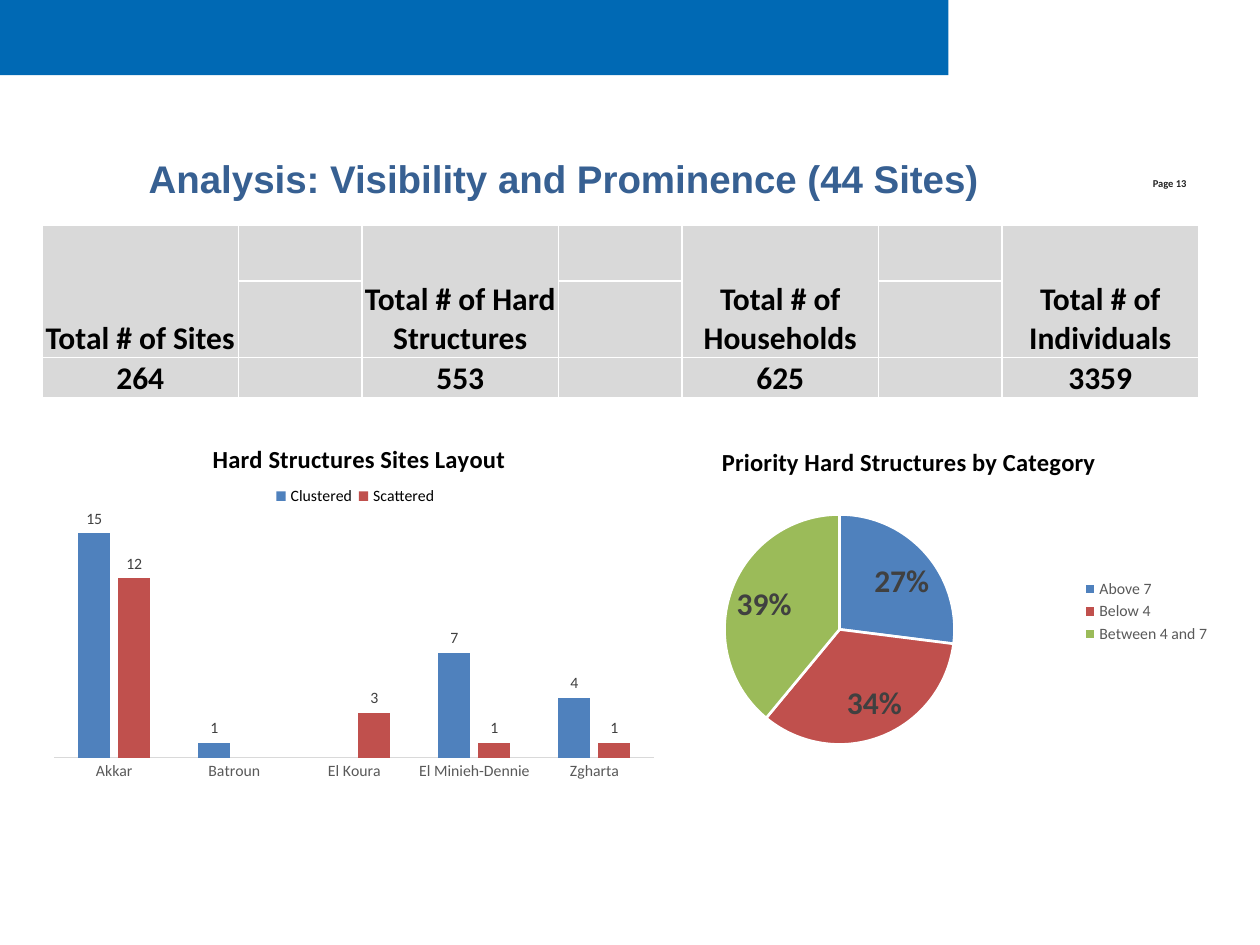
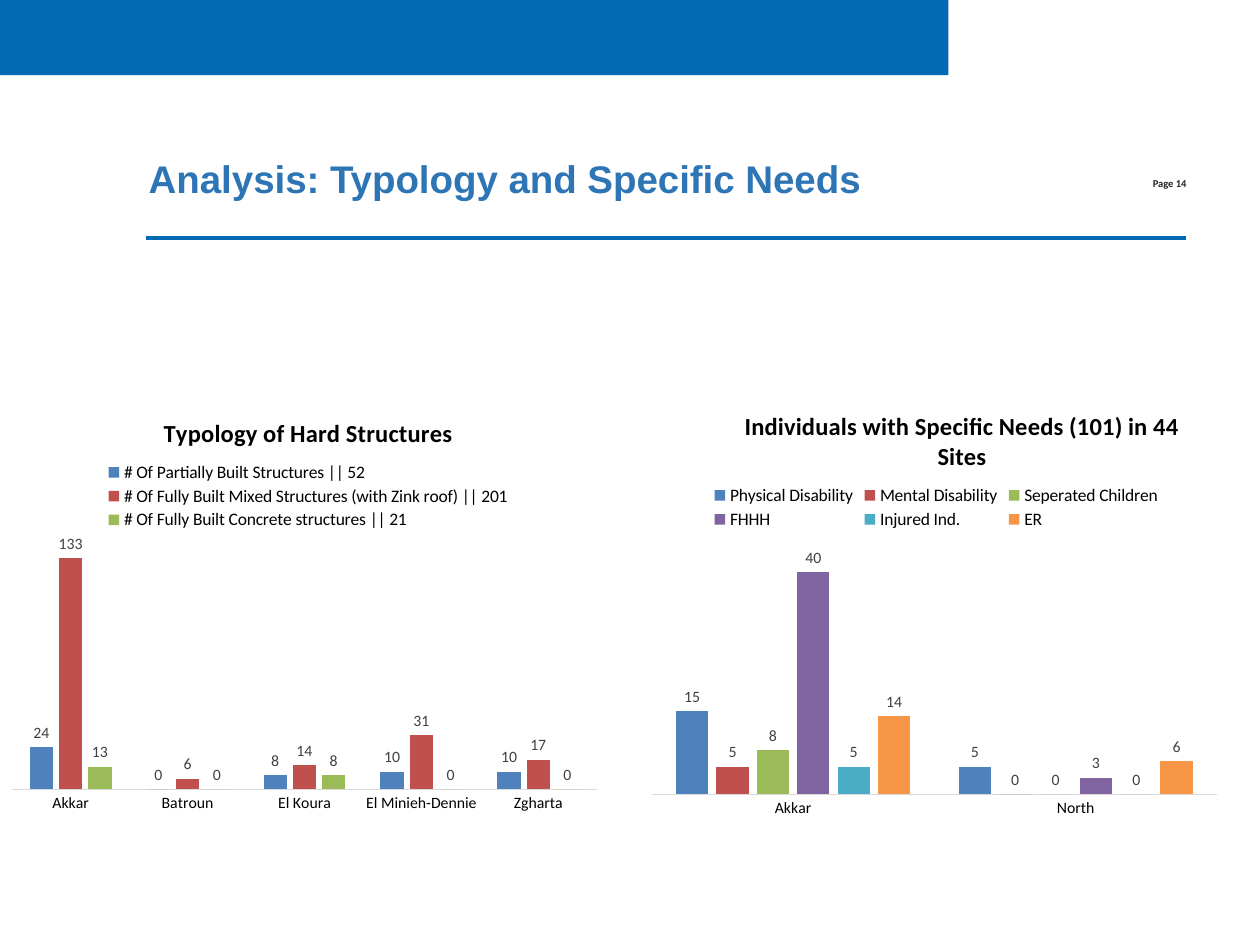
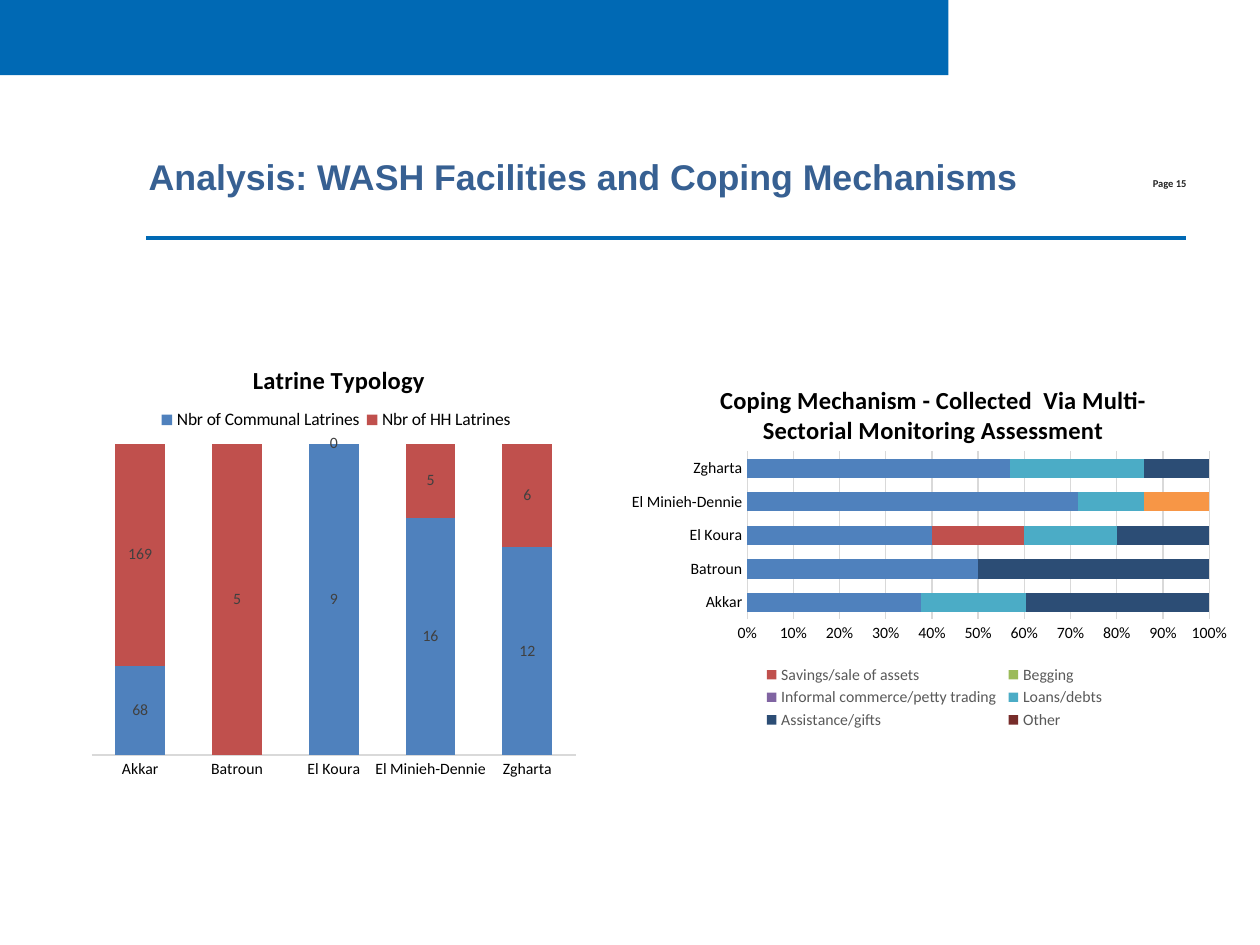
import pptx
import pptx.chart.data
import pptx.dml.color
import pptx.enum.chart
import pptx.enum.shapes
import pptx.enum.text
import pptx.oxml
import pptx.oxml.ns
import pptx.util

Pt = pptx.util.Pt
qn = pptx.oxml.ns.qn
Kind = pptx.enum.chart.XL_CHART_TYPE
Legend = pptx.enum.chart.XL_LEGEND_POSITION
Label = pptx.enum.chart.XL_LABEL_POSITION
Align = pptx.enum.text.PP_ALIGN
RGB = pptx.dml.color.RGBColor.from_string

COLORS = {
    "band": "0069B4", "title": "376092", "bright title": "2E75B6", "page": "232323",
    "text": "000000", "muted": "595959", "label": "404040", "grid": "D9D9D9",
    "panel": "D9D9D9", "white": "FFFFFF",
    "blue": "4F81BD", "red": "C0504D", "green": "9BBB59", "purple": "8064A2",
    "teal": "4BACC6", "orange": "F79646", "navy": "2C4D75", "maroon": "772C2A",
}
SERIES_COLORS = ["blue", "red", "green", "purple", "teal", "orange", "navy", "maroon"]
DISTRICTS = ["Akkar", "Batroun", "El Koura", "El Minieh-Dennie", "Zgharta"]
TOTALS = [("Total # of Sites", "264"), ("Total # of Hard Structures", "553"),
          ("Total # of Households", "625"), ("Total # of Individuals", "3359")]


def write_text(frame, text, size=18, font="Calibri", color="text", align=None):
    paragraph = frame.paragraphs[0]
    paragraph.alignment = align
    run = paragraph.add_run()
    run.text = text
    run.font.name = font
    run.font.size = Pt(size)
    run.font.bold = True
    run.font.color.rgb = RGB(COLORS[color])


def place(element, box, frame, inner=False):
    """Fix a chart part at box, given in slide points, inside the chart's frame."""
    left, top, width, height = frame
    shares = [("x", (box[0] - left) / width), ("y", (box[1] - top) / height)]
    if len(box) == 4:
        shares += [("w", box[2] / width), ("h", box[3] / height)]
    target = '<c:layoutTarget val="inner"/>' if inner else ""
    modes = '<c:xMode val="edge"/><c:yMode val="edge"/>'
    values = "".join(f'<c:{name} val="{share:.4f}"/>' for name, share in shares)
    layout = pptx.oxml.parse_xml(
        f'<c:layout {pptx.oxml.ns.nsdecls("c")}><c:manualLayout>{target}{modes}{values}'
        "</c:manualLayout></c:layout>")
    for old_layout in element.findall(qn("c:layout")):
        element.remove(old_layout)
    overlay = element.find(qn("c:overlay"))
    if overlay is None:
        element.insert(0, layout)
    else:
        overlay.addprevious(layout)


# Content: boxes are left, top, width, height in points on the slide
slides = [
    {"title": "Analysis: Visibility and Prominence (44 Sites)", "size": 22, "color": "title",
     "charts": [
         {"title": "Hard Structures Sites Layout", "kind": Kind.COLUMN_CLUSTERED,
          "frame": (24, 238, 357, 212), "title at": (119, 250),
          "plot": (31, 296, 343, 137), "legend": (154, 277, 98, 13),
          "legend size": 9, "axis color": "muted", "maximum": 16,
          "categories": DISTRICTS,
          "series": [("Clustered", [15, 1, None, 7, 4]),
                     ("Scattered", [12, None, 3, 1, 1])]},
         {"title": "Priority Hard Structures by Category", "kind": Kind.PIE,
          "frame": (336, 239, 362, 221), "title at": (410, 252),
          "plot": (414, 294, 131.5, 131.5), "legend": (617, 329, 76, 41),
          "legend size": 9, "legend color": "muted", "legend side": Legend.RIGHT,
          "categories": ["Above 7", "Below 4", "Between 4 and 7"],
          "series": [("Share", [27, 34, 39])]},
     ]},
    {"title": "Analysis: Typology and Specific Needs", "size": 22, "color": "bright title",
     "charts": [
         {"title": "Typology of Hard Structures", "kind": Kind.COLUMN_CLUSTERED,
          "frame": (0, 222, 348, 247), "title at": (91, 235),
          "plot": (7, 312, 334, 139), "legend": (58, 262, 236, 43),
          "maximum": 140, "categories": DISTRICTS,
          "series": [
              ("# Of Partially Built Structures || 52", [24, 0, 8, 10, 10]),
              ("# Of Fully Built Mixed Structures (with Zink roof) || 201",
               [133, 6, 14, 31, 17]),
              ("# Of Fully Built Concrete structures || 21", [13, 0, 8, 0, 0])]},
         {"title": "Individuals with Specific Needs (101) in 44 Sites",
          "kind": Kind.COLUMN_CLUSTERED,
          "frame": (366, 219, 336, 253), "title at": (423, 231),
          "plot": (372.5, 311, 323, 143), "legend": (405, 275, 260, 30),
          "maximum": 45, "categories": ["Akkar", "North"],
          "series": [("Physical Disability", [15, 5]), ("Mental Disability", [5, 0]),
                     ("Seperated Children", [8, 0]), ("FHHH", [40, 3]),
                     ("Injured Ind.", [5, 0]), ("ER", [14, 6])]},
     ]},
    {"title": "Analysis: WASH Facilities and Coping Mechanisms", "size": 20.4, "color": "title",
     "charts": [
         {"title": "Latrine Typology", "kind": Kind.COLUMN_STACKED_100,
          "frame": (47, 192, 288, 258), "title at": (142, 205),
          "plot": (52.5, 253.5, 276.5, 178), "legend": (88, 233, 208, 14),
          "maximum": 1, "gap": 95, "categories": DISTRICTS,
          "series": [("Nbr of Communal Latrines", [68, None, 9, 16, 12]),
                     ("Nbr of HH Latrines", [169, 5, 0, 5, 6])]},
         {"title": "Coping Mechanism - Collected  Via Multi-Sectorial Monitoring Assessment",
          "kind": Kind.BAR_STACKED_100,
          "frame": (354, 204, 354, 216), "title at": (409, 216),
          "plot": (427, 258, 264, 96), "legend": (434, 378, 200, 41),
          "legend size": 9, "legend color": "muted", "legend side": Legend.BOTTOM,
          "hidden entries": [2, 7], "maximum": 1, "gap": 75, "categories": DISTRICTS,
          "series": [("Labour", [38, 50, 40, 71, 57]),
                     ("Savings/sale of assets", [0, 0, 20, 0, 0]),
                     ("Begging", [0] * 5),
                     ("Informal commerce/petty trading", [0] * 5),
                     ("Loans/debts", [23, 0, 20, 14, 29]),
                     ("Remittances", [0, 0, 0, 14, 0]),
                     ("Assistance/gifts", [40, 50, 20, 0, 14]),
                     ("Other", [0] * 5)]},
     ]},
]

presentation = pptx.Presentation()
presentation.slide_width, presentation.slide_height = Pt(720), Pt(540)

for page_number, content in enumerate(slides, start=13):
    slide = presentation.slides.add_slide(presentation.slide_layouts[6])

    # Band and rule
    band = slide.shapes.add_shape(
        pptx.enum.shapes.MSO_SHAPE.RECTANGLE, 0, 0, Pt(542), Pt(43))
    band.shadow.inherit = False
    band.fill.solid()
    band.fill.fore_color.rgb = RGB(COLORS["band"])
    band.line.fill.background()
    rule = slide.shapes.add_connector(
        pptx.enum.shapes.MSO_CONNECTOR.STRAIGHT, Pt(677.5), Pt(136), Pt(83.5), Pt(136))
    rule.line.color.rgb = RGB(COLORS["band"])
    rule.line.width = Pt(2)
    rule.element.spPr.append(
        pptx.oxml.parse_xml(f'<a:effectLst {pptx.oxml.ns.nsdecls("a")}/>'))

    # Title and page number
    for text, box, style in [
        (content["title"], (85, 88.3, 501, 27),
         {"size": content["size"], "font": "Arial", "color": content["color"]}),
        (f"Page {page_number}", (646, 101, 32, 7),
         {"size": 6, "color": "page", "align": Align.RIGHT}),
    ]:
        frame = slide.shapes.add_textbox(*map(Pt, box)).text_frame
        frame.word_wrap = True
        frame.margin_left = frame.margin_right = frame.margin_top = frame.margin_bottom = 0
        write_text(frame, text, **style)

    # Totals table on the first slide
    if page_number == 13:
        table = slide.shapes.add_table(3, 7, Pt(24), Pt(128.5), Pt(661), Pt(86)).table
        for index, column in enumerate(table.columns):
            column.width = Pt(70.6 if index % 2 else 112.3)
        for row, height in zip(table.rows, (32, 31, 23)):
            row.height = Pt(height)
        for cell in table.iter_cells():
            cell.fill.solid()
            cell.fill.fore_color.rgb = RGB(COLORS["panel"])
            cell.margin_left = cell.margin_right = cell.margin_top = Pt(0.72)
            cell.margin_bottom = 0
            cell.vertical_anchor = pptx.enum.text.MSO_ANCHOR.BOTTOM
        for index, (heading, total) in enumerate(TOTALS):
            heading_cell = table.cell(0, 2 * index)
            heading_cell.merge(table.cell(1, 2 * index))
            write_text(heading_cell.text_frame, heading, align=Align.CENTER)
            write_text(table.cell(2, 2 * index).text_frame, total, align=Align.CENTER)

    # Charts
    for spec_chart in content["charts"]:
        kind, box = spec_chart["kind"], spec_chart["frame"]
        chart_data = pptx.chart.data.CategoryChartData()
        chart_data.categories = spec_chart["categories"]
        for name, values in spec_chart["series"]:
            chart_data.add_series(name, values)
        chart = slide.shapes.add_chart(kind, *map(Pt, box), chart_data).chart
        chart.font.name = "Calibri"
        chart.font.size = Pt(10)
        chart.font.color.rgb = RGB(COLORS["text"])
        chart_node = chart.element.find(qn("c:chart"))
        chart_node.addnext(pptx.oxml.parse_xml(
            f'<c:spPr {pptx.oxml.ns.nsdecls("c", "a")}><a:noFill/>'
            "<a:ln><a:noFill/></a:ln></c:spPr>"))

        # Chart title, legend and plot area
        chart.has_title = True
        write_text(chart.chart_title.text_frame, spec_chart["title"], size=14)
        chart.chart_title.include_in_layout = False
        chart.has_legend = True
        legend = chart.legend
        legend.position = spec_chart.get("legend side", Legend.TOP)
        legend.include_in_layout = False
        legend.font.name = "Calibri"
        legend.font.size = Pt(spec_chart.get("legend size", 10))
        legend.font.color.rgb = RGB(COLORS[spec_chart.get("legend color", "text")])
        legend_node = chart_node.find(qn("c:legend"))
        place(chart_node.find(qn("c:title")), spec_chart["title at"], box)
        place(legend_node, spec_chart["legend"], box)
        place(chart_node.find(qn("c:plotArea")), spec_chart["plot"], box, inner=True)
        for entry in spec_chart.get("hidden entries", []):
            legend_node.find(qn("c:layout")).addprevious(pptx.oxml.parse_xml(
                f'<c:legendEntry {pptx.oxml.ns.nsdecls("c")}><c:idx val="{entry}"/>'
                '<c:delete val="1"/></c:legendEntry>'))

        # Data labels
        plot = chart.plots[0]
        plot.vary_by_categories = kind == Kind.PIE
        if kind != Kind.BAR_STACKED_100:
            plot.has_data_labels = True
            labels = plot.data_labels
            labels.show_value = kind != Kind.PIE
            labels.font.name = "Calibri"
            labels.font.size = Pt(18 if kind == Kind.PIE else 9)
            labels.font.bold = kind == Kind.PIE
            labels.font.color.rgb = RGB(COLORS["label"])
            if kind == Kind.COLUMN_CLUSTERED:
                labels.position = Label.OUTSIDE_END

        # Pie slices
        if kind == Kind.PIE:
            labels.show_percentage = True
            labels.number_format = "0%"
            labels.number_format_is_linked = False
            labels.position = Label.BEST_FIT
            for index, color in enumerate(SERIES_COLORS[:3]):
                pie_slice = plot.series[0].points[index].format
                pie_slice.fill.solid()
                pie_slice.fill.fore_color.rgb = RGB(COLORS[color])
                pie_slice.line.color.rgb = RGB(COLORS["white"])
                pie_slice.line.width = Pt(1.5)
            continue

        # Bars
        plot.gap_width = spec_chart.get("gap", 150)
        plot.overlap = -25 if kind == Kind.COLUMN_CLUSTERED else 100
        for series, color in zip(plot.series, SERIES_COLORS):
            series.invert_if_negative = False
            series.format.fill.solid()
            series.format.fill.fore_color.rgb = RGB(COLORS[color])

        # Axes
        for axis in (chart.category_axis, chart.value_axis):
            axis.major_tick_mark = axis.minor_tick_mark = pptx.enum.chart.XL_TICK_MARK.NONE
            axis.tick_labels.font.name = "Calibri"
            axis.tick_labels.font.size = Pt(9)
            axis.tick_labels.font.color.rgb = RGB(
                COLORS[spec_chart.get("axis color", "text")])
        chart.category_axis.format.line.color.rgb = RGB(COLORS["grid"])
        chart.category_axis.format.line.width = Pt(0.75)
        value_axis = chart.value_axis
        value_axis.minimum_scale = 0
        value_axis.maximum_scale = spec_chart["maximum"]
        value_axis.format.line.fill.background()
        value_axis.visible = value_axis.has_major_gridlines = kind == Kind.BAR_STACKED_100
        if value_axis.visible:
            value_axis.major_unit = 0.1
            value_axis.tick_labels.number_format = "0%"
            value_axis.tick_labels.number_format_is_linked = False
            value_axis.major_gridlines.format.line.color.rgb = RGB(COLORS["grid"])
            value_axis.major_gridlines.format.line.width = Pt(0.75)

presentation.save("out.pptx")
